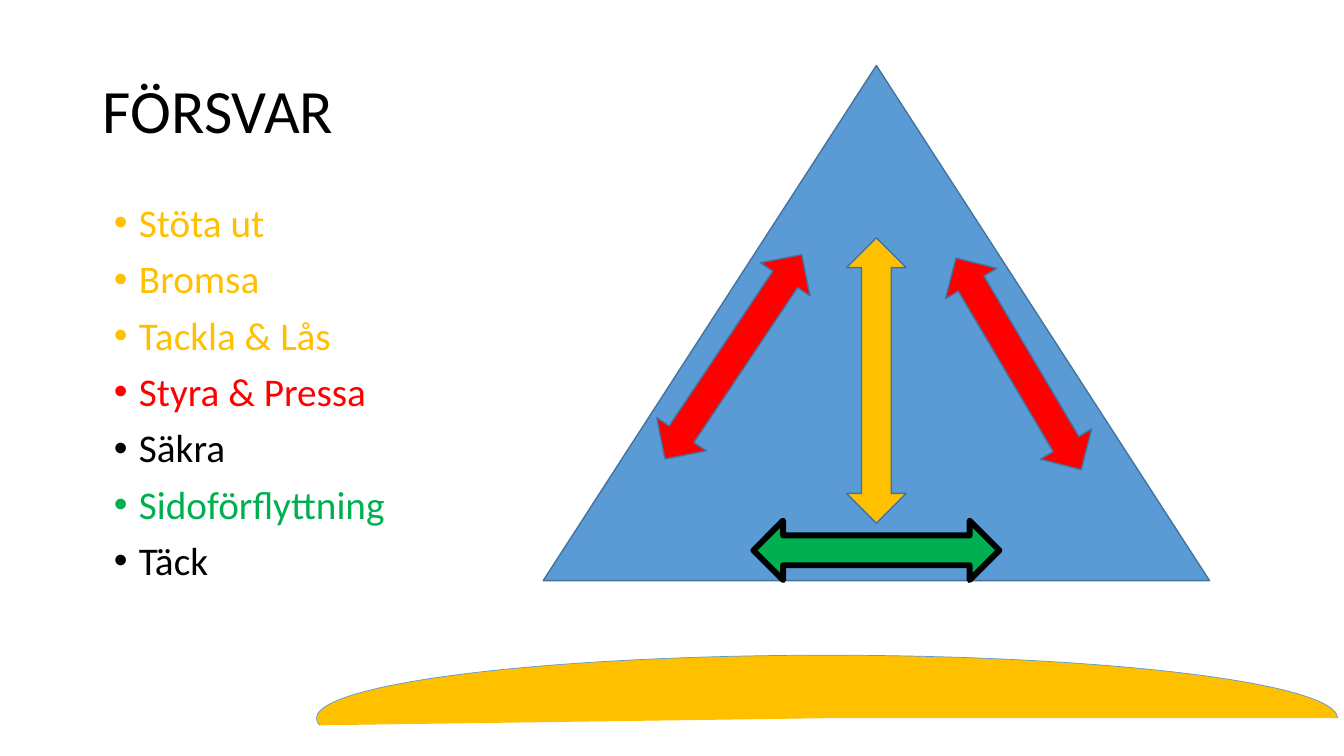
import pptx
import pptx.util
import pptx.dml.color
import pptx.enum.shapes
import pptx.enum.text
import pptx.oxml.ns
import lxml.etree

Pt = pptx.util.Pt
Shapes = pptx.enum.shapes.MSO_SHAPE

COLOURS = {
    "black": "000000",
    "blue": "5B9BD5",
    "outline": "43739E",
    "yellow": "FFC000",
    "red": "FF0000",
    "green": "00B050",
}


class SlideBuilder:
    font_name = "Calibri"
    arrow_width = 42.5

    def __init__(self, slide):
        self.slide = slide

    def colour(self, name):
        return pptx.dml.color.RGBColor.from_string(COLOURS[name])

    def style(self, paragraph, size, colour):
        paragraph.alignment = pptx.enum.text.PP_ALIGN.LEFT
        paragraph.line_spacing = 0.9
        paragraph.font.name = self.font_name
        paragraph.font.size = Pt(size)
        paragraph.font.color.rgb = self.colour(colour)

    def title(self, text, left, top, width, height):
        heading = self.slide.shapes.title
        heading.left, heading.top = Pt(left), Pt(top)
        heading.width, heading.height = Pt(width), Pt(height)
        frame = heading.text_frame
        frame.text = text
        frame.vertical_anchor = pptx.enum.text.MSO_ANCHOR.MIDDLE
        self.style(frame.paragraphs[0], 44, "black")

    def bullets(self, entries, left, top, width, height):
        box = self.slide.shapes.add_textbox(Pt(left), Pt(top), Pt(width), Pt(height))
        frame = box.text_frame
        frame.word_wrap = True
        for index, (text, colour) in enumerate(entries):
            paragraph = frame.add_paragraph() if index else frame.paragraphs[0]
            paragraph.text = text
            self.style(paragraph, 28, colour)
            paragraph.space_before = Pt(10)
            properties = paragraph._p.get_or_add_pPr()
            properties.set("marL", str(Pt(18)))
            properties.set("indent", str(Pt(-18)))
            for tag, key, value in (("a:buFont", "typeface", "Arial"), ("a:buChar", "char", "•")):
                bullet = lxml.etree.SubElement(properties, pptx.oxml.ns.qn(tag))
                bullet.set(key, value)

    def shape(self, kind, left, top, width, height, fill, line="outline", weight=1):
        shape = self.slide.shapes.add_shape(kind, Pt(left), Pt(top), Pt(width), Pt(height))
        shape.shadow.inherit = False
        shape.fill.solid()
        shape.fill.fore_color.rgb = self.colour(fill)
        shape.line.color.rgb = self.colour(line)
        shape.line.width = Pt(weight)
        return shape

    def arrow(self, centre_x, centre_y, length, rotation, fill, **line_style):
        arrow = self.shape(
            Shapes.UP_DOWN_ARROW,
            centre_x - self.arrow_width / 2,
            centre_y - length / 2,
            self.arrow_width,
            length,
            fill,
            **line_style,
        )
        arrow.rotation = rotation


def main():
    presentation = pptx.Presentation()
    presentation.slide_width, presentation.slide_height = Pt(960), Pt(540)
    defence = SlideBuilder(presentation.slides.add_slide(presentation.slide_layouts[5]))

    defence.title("FÖRSVAR", 66.25, 28.8, 828, 104.4)
    defence.bullets(
        [
            ("Stöta ut", "yellow"),
            ("Bromsa", "yellow"),
            ("Tackla & Lås", "yellow"),
            ("Styra & Pressa", "red"),
            ("Säkra", "black"),
            ("Sidoförflyttning", "green"),
            ("Täck", "black"),
        ],
        74.2, 141.8, 828, 342.7,
    )

    defence.shape(Shapes.ISOSCELES_TRIANGLE, 388, 46.8, 476, 368, "blue")
    defence.arrow(626, 271.8, 203.8, 0, "yellow")
    defence.arrow(523.8, 254.9, 175.7, 33.8, "red")
    defence.arrow(727.6, 259.9, 175.7, 329.4, "red")
    defence.arrow(626, 393.1, 175.7, 270, "green", line="black", weight=4.25)

    goal_area = defence.shape(Shapes.ARC, 226.1, 468, 729.4, 90, "yellow", "blue", 0.5)
    goal_area.adjustments[0] = 107.52
    goal_area.adjustments[1] = 0

    presentation.save("out.pptx")


if __name__ == "__main__":
    main()
